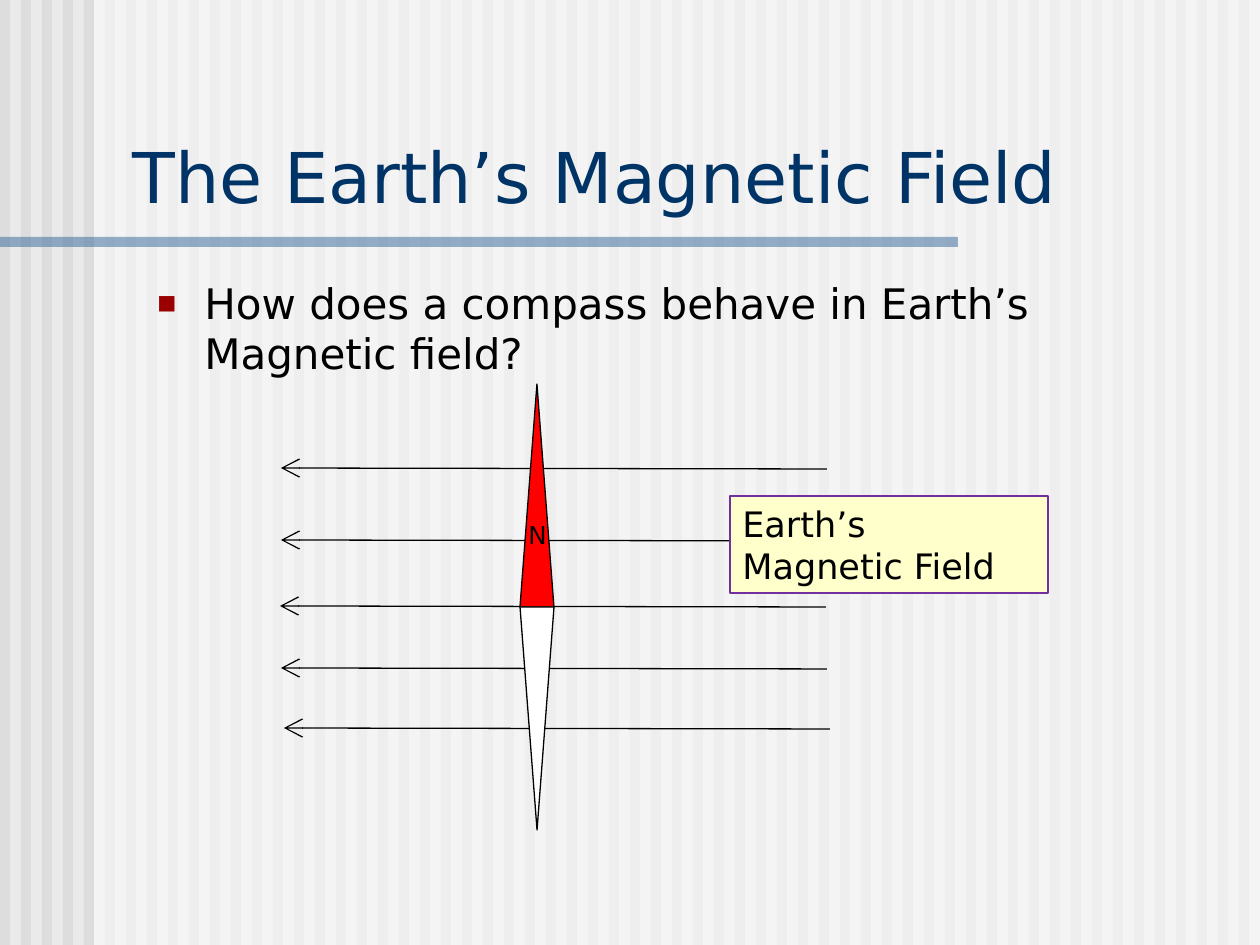
import lxml.etree
import pptx
import pptx.dml.color
import pptx.enum.shapes
import pptx.enum.text
import pptx.oxml.ns
import pptx.util

PX = 7257  # EMU in one px, 126 px to the inch
WIDE, HIGH = 1260, 945
FONT = "DejaVu Sans"
HUES = {
    "back": "EAEAEA", "stripe": "DDDDDD", "white": "FFFFFF", "rule": "336699",
    "title": "003366", "black": "000000", "bullet": "9A0000", "north": "FF0000",
    "note": "FFFFCC", "edge": "7030A0",
}
RGB = {name: pptx.dml.color.RGBColor.from_string(code)
       for name, code in HUES.items()}
THIN = pptx.util.Pt(0.75)
RECT = pptx.enum.shapes.MSO_SHAPE.RECTANGLE
WEDGE = pptx.enum.shapes.MSO_SHAPE.ISOSCELES_TRIANGLE
LINE = pptx.enum.shapes.MSO_CONNECTOR.STRAIGHT
ANCHOR = pptx.enum.text.MSO_ANCHOR
LEFT = pptx.enum.text.PP_ALIGN.LEFT
qn = pptx.oxml.ns.qn
add_tag = lxml.etree.SubElement


def box(kind, left, top, width, height, fill, line=None, alpha=None):
    shape = slide.shapes.add_shape(
        kind, left * PX, top * PX, width * PX, height * PX)
    shape.shadow.inherit = False
    shape.fill.solid()
    shape.fill.fore_color.rgb = RGB[fill]
    if alpha:
        color = shape._element.spPr.find(qn("a:solidFill"))[0]
        add_tag(color, qn("a:alpha"), val=str(alpha * 1000))
    if line:
        shape.line.color.rgb = RGB[line]
        shape.line.width = THIN
    else:
        shape.line.fill.background()
    return shape


def text(shape, words, size, color="black", anchor=ANCHOR.TOP, wrap=True):
    frame = shape.text_frame
    frame.word_wrap = wrap
    frame.vertical_anchor = anchor
    para = frame.paragraphs[0]
    para.alignment = LEFT
    run = para.add_run()
    run.text = words
    run.font.name = FONT
    run.font.size = pptx.util.Pt(size)
    run.font.color.rgb = RGB[color]
    return para


deck = pptx.Presentation()
deck.slide_width = pptx.util.Inches(10)
deck.slide_height = pptx.util.Inches(7.5)
slide = deck.slides.add_slide(deck.slide_layouts[6])

# Striped background, pale to the right of the margin
slide.background.fill.solid()
slide.background.fill.fore_color.rgb = RGB["back"]
pitch, band, margin = 21, 10, 94
for x in range(0, WIDE, pitch):
    box(RECT, x, 0, band, HIGH, "stripe")
box(RECT, margin, 0, WIDE - margin, HIGH, "white", alpha=50)

# Title and the rule below it
box(RECT, 0, 237, 958, 10, "rule", alpha=50)
title = slide.shapes.add_textbox(120 * PX, 127 * PX, 1125 * PX, 97 * PX)
text(title, "The Earth’s Magnetic Field", 40, color="title",
     anchor=ANCHOR.BOTTOM)

# Question with a square bullet
body = slide.shapes.add_textbox(145 * PX, 271 * PX, 1081 * PX, 141 * PX)
para = text(body, "How does a compass behave in Earth’s Magnetic field?", 24)
hang = 47 * PX
props = para._p.get_or_add_pPr()
props.set("marL", str(hang))
props.set("indent", str(-hang))
space = add_tag(props, qn("a:spcBef"))
add_tag(space, qn("a:spcPct"), val="20000")
color = add_tag(props, qn("a:buClr"))
add_tag(color, qn("a:srgbClr"), val=HUES["bullet"])
add_tag(props, qn("a:buSzPct"), val="48000")
add_tag(props, qn("a:buFont"), typeface=FONT)
add_tag(props, qn("a:buChar"), char="■")

# Field lines, drawn from right to left with a slight rise
reach, rise = 546, 1
for x, y in [(281, 468), (281, 540), (280, 606), (281, 668), (284, 728)]:
    field = slide.shapes.add_connector(
        LINE, (x + reach) * PX, (y + rise) * PX, x * PX, y * PX)
    field.line.color.rgb = RGB["black"]
    field.line.width = THIN
    props = field._element.spPr
    add_tag(props.find(qn("a:ln")), qn("a:tailEnd"),
            type="arrow", w="lg", len="lg")
    add_tag(props, qn("a:effectLst"))

# Compass needle: two equal wedges, base to base
left, top, width, half = 520, 384, 34, 223
north = box(WEDGE, left, top, width, half, "north", line="black")
south = box(WEDGE, left, top + half, width, half, "white", line="black")
south.rotation = 180
text(north, "N", 14, wrap=False)
frame = north.text_frame
frame.margin_left = frame.margin_bottom = 0
frame.margin_top = 25 * PX
frame.margin_right = 13 * PX

# Label of the field lines
note = box(RECT, 730, 496, 318, 97, "note", line="edge")
text(note, "Earth’s Magnetic Field", 20)

deck.save("out.pptx")
